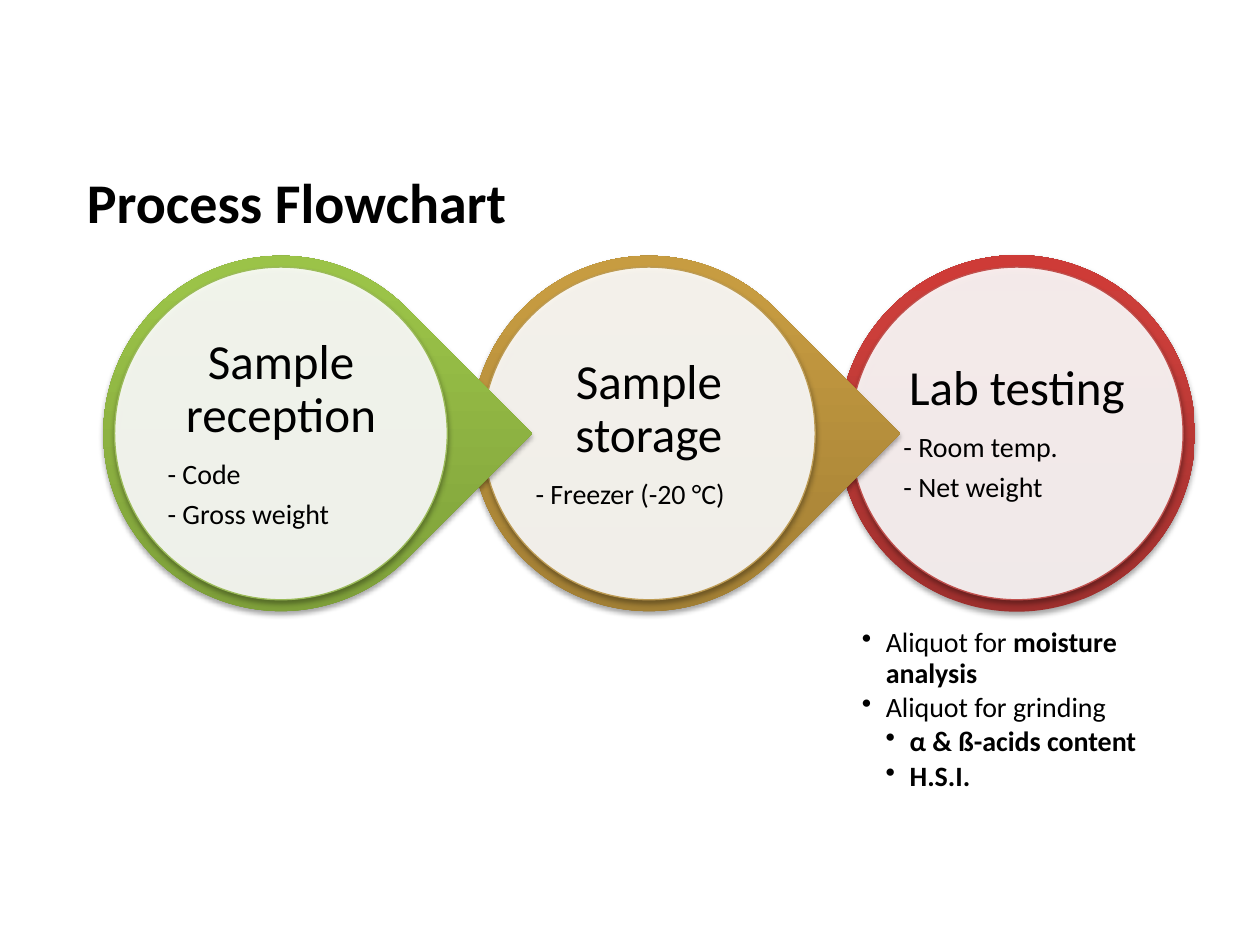
from lxml import etree
from pptx import Presentation
from pptx.dml.color import RGBColor
from pptx.enum.shapes import MSO_SHAPE as Shape
from pptx.enum.text import MSO_ANCHOR as Anchor, PP_ALIGN as Align
from pptx.oxml import parse_xml
from pptx.oxml.ns import nsdecls, qn
from pptx.util import Inches, Pt

FONT = "Calibri"
BLACK = "000000"
STEP_PITCH = 2.92
FIRST_CENTER = 2.23
CENTER_Y = 3.44
DISC_SIZE = 2.64
LABEL_SIZE = 1.88

# heading, details, ring shape, ring size, gradient from bottom to top, disc outline
STEPS = [
    ("Sample reception", ["- Code", "- Gross weight"],
     Shape.TEAR, 2.82, ("779737", "9BC348", "9DC746"), "9BBB59"),
    ("Sample storage", ["- Freezer (-20 °C)"],
     Shape.TEAR, 2.82, ("997832", "C79C41", "CB9D3F"), "BD9B53"),
    ("Lab testing", ["- Room temp.", "- Net weight"],
     Shape.OVAL, 2.83, ("9C2F2D", "CB3E3A", "CE3B37"), "C0504D"),
]

# level, runs of (text, bold)
ALIQUOTS = [
    (1, [("Aliquot for ", False), ("moisture analysis", True)]),
    (1, [("Aliquot for grinding", False)]),
    (2, [("α & ß-acids content", True)]),
    (2, [("H.S.I.", True)]),
]


def rgb(value):
    return RGBColor.from_string(value)


def add_child(parent, tag, **attributes):
    return etree.SubElement(parent, qn(tag), attributes)


def set_shadow(shape):
    shape.shadow.inherit = False
    effects = shape._element.spPr.find(qn("a:effectLst"))
    shadow = add_child(effects, "a:outerShdw", blurRad=str(Pt(3.1)),
                       dist=str(Pt(1.8)), dir="5400000", rotWithShape="0")
    color = add_child(shadow, "a:srgbClr", val=BLACK)
    add_child(color, "a:alpha", val="35000")


def set_gradient(shape, colors):
    stops = "".join(
        f'<a:gs pos="{position}"><a:srgbClr val="{color}"/></a:gs>'
        for position, color in zip((0, 80000, 100000), colors))
    gradient = parse_xml(
        f'<a:gradFill {nsdecls("a")} rotWithShape="0"><a:gsLst>{stops}</a:gsLst>'
        '<a:lin ang="16200000" scaled="0"/></a:gradFill>')
    shape._element.spPr.find(qn("a:prstGeom")).addnext(gradient)


def add_centered(slide, kind, center_x, size):
    return slide.shapes.add_shape(
        kind, Inches(center_x - size / 2), Inches(CENTER_Y - size / 2),
        Inches(size), Inches(size))


def add_text_box(slide, left, top, width, height, inset, anchor):
    box = slide.shapes.add_textbox(
        Inches(left), Inches(top), Inches(width), Inches(height))
    frame = box.text_frame
    settings = {"word_wrap": True, "vertical_anchor": anchor}
    for side in ("left", "top", "right", "bottom"):
        settings[f"margin_{side}"] = Inches(inset)
    for name, value in settings.items():
        setattr(frame, name, value)
    return frame


def add_run(paragraph, text, size, bold=False):
    run = paragraph.add_run()
    run.text = text
    for name, value in {"name": FONT, "size": Pt(size), "bold": bold}.items():
        setattr(run.font, name, value)
    run.font.color.rgb = rgb(BLACK)


def add_paragraph(frame, index, after_percent):
    paragraph = frame.add_paragraph() if index else frame.paragraphs[0]
    properties = paragraph._p.get_or_add_pPr()
    after = add_child(properties, "a:spcAft")
    add_child(after, "a:spcPct", val=str(after_percent * 1000))
    paragraph.line_spacing = 0.9
    return paragraph


def add_step(slide, center_x, heading, details, ring_kind, ring_size, colors, outline):
    # Coloured ring, with a pointer to the next step
    ring = add_centered(slide, ring_kind, center_x, ring_size)
    if ring_kind == Shape.TEAR:
        ring.rotation = 45
        ring.adjustments[0] = 1
    set_gradient(ring, colors)
    ring.line.fill.background()
    set_shadow(ring)

    # Pale disc
    disc = add_centered(slide, Shape.OVAL, center_x, DISC_SIZE)
    disc.fill.solid()
    disc.fill.fore_color.rgb = rgb("FFFFFF")
    white = disc._element.spPr.find(qn("a:solidFill"))[0]
    add_child(white, "a:alpha", val="90000")
    disc.line.color.rgb = rgb(outline)
    disc.line.width = Pt(0.75)
    set_shadow(disc)

    # Heading and details
    label = add_text_box(slide, center_x - LABEL_SIZE / 2, CENTER_Y - LABEL_SIZE / 2,
                         LABEL_SIZE, LABEL_SIZE, 0.04, Anchor.MIDDLE)
    for index, text in enumerate([heading, *details]):
        paragraph = add_paragraph(label, index, 35)
        paragraph.alignment = Align.LEFT if index else Align.CENTER
        add_run(paragraph, text, 16 if index else 28)


def add_aliquots(slide):
    frame = add_text_box(slide, 6.75, 4.9, DISC_SIZE, 1.55, 0.09, Anchor.TOP)
    for index, (level, runs) in enumerate(ALIQUOTS):
        paragraph = add_paragraph(frame, index, 15)
        paragraph.level = level
        properties = paragraph._p.get_or_add_pPr()
        properties.set("marL", str(Inches(0.19 * level)))
        properties.set("indent", str(Inches(-0.19)))
        add_child(properties, "a:buChar", char="•")
        for text, bold in runs:
            add_run(paragraph, text, 16, bold)


def add_title(slide):
    frame = add_text_box(slide, 0.59, 1.37, 7.58, 0.46, 0.1, Anchor.MIDDLE)
    add_run(frame.paragraphs[0], "Process Flowchart", 32, True)


def main():
    deck = Presentation()
    deck.slide_width, deck.slide_height = Inches(10), Inches(7.5)
    slide = deck.slides.add_slide(deck.slide_layouts[6])
    add_title(slide)
    # Later steps lie behind, so that each pointer overlaps the next ring
    for index, step in reversed(list(enumerate(STEPS))):
        add_step(slide, FIRST_CENTER + index * STEP_PITCH, *step)
    add_aliquots(slide)
    deck.save("out.pptx")


if __name__ == "__main__":
    main()
